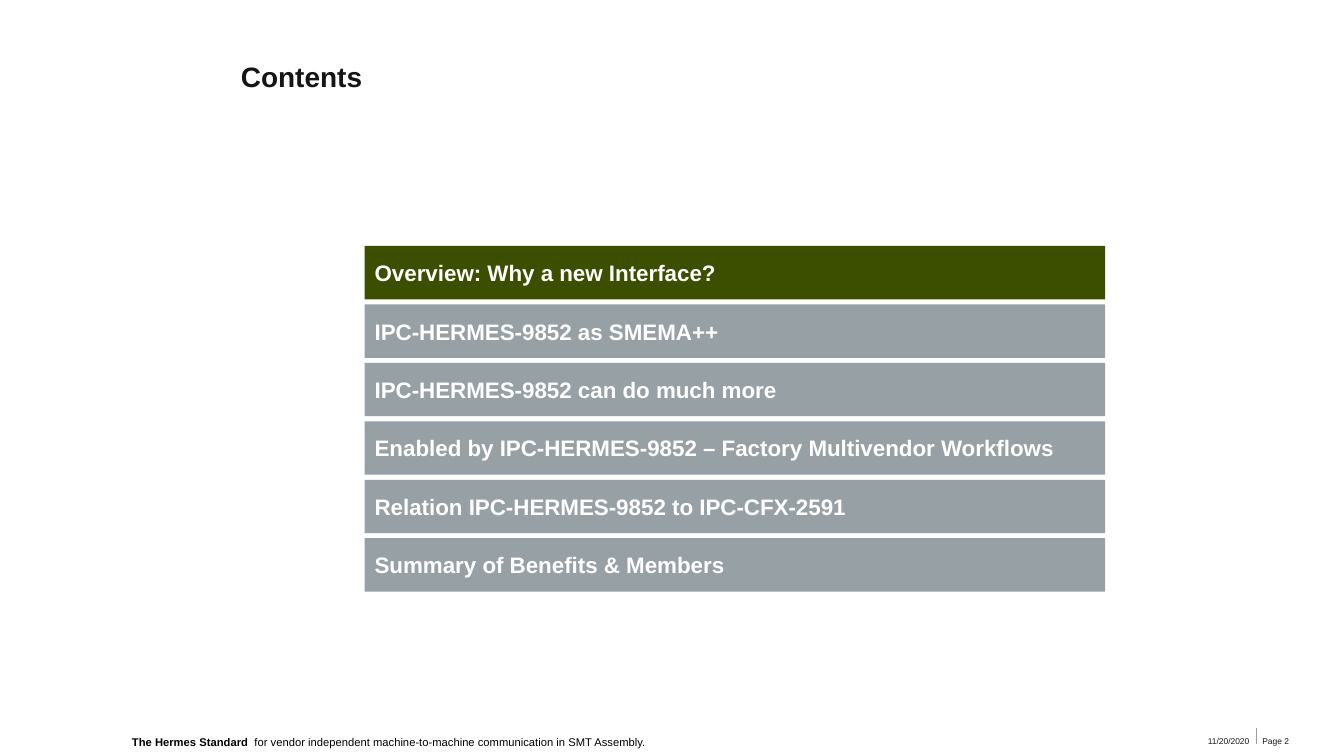
from lxml import etree
from pptx import Presentation
from pptx.dml.color import RGBColor
from pptx.enum import shapes, text
from pptx.util import Inches, Pt

WHITE = RGBColor(0xFF, 0xFF, 0xFF)
BLACK = RGBColor(0x00, 0x00, 0x00)
INK = RGBColor(0x15, 0x15, 0x17)
GREY = RGBColor(0x97, 0xA0, 0xA5)
GREEN = RGBColor(0x3C, 0x4F, 0x00)

LEFT, RIGHT = text.PP_ALIGN.LEFT, text.PP_ALIGN.RIGHT
MIDDLE, BOTTOM = text.MSO_ANCHOR.MIDDLE, text.MSO_ANCHOR.BOTTOM

deck = Presentation()
deck.slide_width, deck.slide_height = Inches(13.34), Inches(7.5)
page = deck.slides.add_slide(deck.slide_layouts[6])


def add_text(*spans, at, size, color=INK, fill=None, align=LEFT,
             anchor=MIDDLE, insets=(0.1, 0.05, 0.1, 0.05)):
    """Add a box of one paragraph; each span is a (wording, bold) pair."""
    place = [Inches(length) for length in at]
    if fill is None:
        box = page.shapes.add_textbox(*place)
    else:
        box = page.shapes.add_shape(shapes.MSO_SHAPE.RECTANGLE, *place)
        box.shadow.inherit = False
        box.fill.solid()
        box.fill.fore_color.rgb = fill
        box.line.fill.background()
    frame = box.text_frame
    frame.word_wrap = True
    frame.vertical_anchor = anchor
    (frame.margin_left, frame.margin_top,
     frame.margin_right, frame.margin_bottom) = [Inches(i) for i in insets]
    para = frame.paragraphs[0]
    para.alignment = align
    for wording, bold in spans:
        span = para.add_run()
        span.text = wording
        span.font.name = "Arial"
        span.font.size = Pt(size)
        span.font.bold = bold
        span.font.color.rgb = color


# Title
add_text(("Contents", True), at=(1.92, 0.13, 11.42, 1.25), size=20,
         insets=(0.47, 0.07, 0.13, 0.07))

# Agenda bars, the current chapter first
chapters = [
    "Overview: Why a new Interface?",
    "IPC-HERMES-9852 as SMEMA++",
    "IPC-HERMES-9852 can do much more",
    "Enabled by IPC-HERMES-9852 – Factory Multivendor Workflows",
    "Relation IPC-HERMES-9852 to IPC-CFX-2591",
    "Summary of Benefits & Members",
]
for row, chapter in enumerate(chapters):
    add_text((chapter, True), at=(3.62, 2.44 + 0.58 * row, 7.35, 0.53),
             size=16, color=WHITE, fill=GREY if row else GREEN)

# Footer
add_text(("The Hermes Standard ", True),
         (" for vendor independent machine-to-machine communication in SMT Assembly.", False),
         at=(1.27, 7.29, 6.27, 0.15), size=8, color=BLACK, fill=WHITE,
         insets=(0.04, 0, 0.04, 0))
add_text(("11/20/2020", False), at=(10.99, 7.24, 1.41, 0.22), size=6,
         align=RIGHT, anchor=BOTTOM, insets=(0, 0, 0, 0.06))
add_text(("Page 2", False), at=(12.53, 7.24, 0.68, 0.22), size=6,
         anchor=BOTTOM, insets=(0, 0, 0, 0.06))

divider = page.shapes.add_connector(
    shapes.MSO_CONNECTOR.STRAIGHT,
    Inches(12.47), Inches(7.22), Inches(12.47), Inches(7.38))
divider.line.color.rgb = GREY
divider.line.width = Pt(0.75)
etree.SubElement(divider.element.spPr,
                 "{http://schemas.openxmlformats.org/drawingml/2006/main}effectLst")

deck.save("out.pptx")
